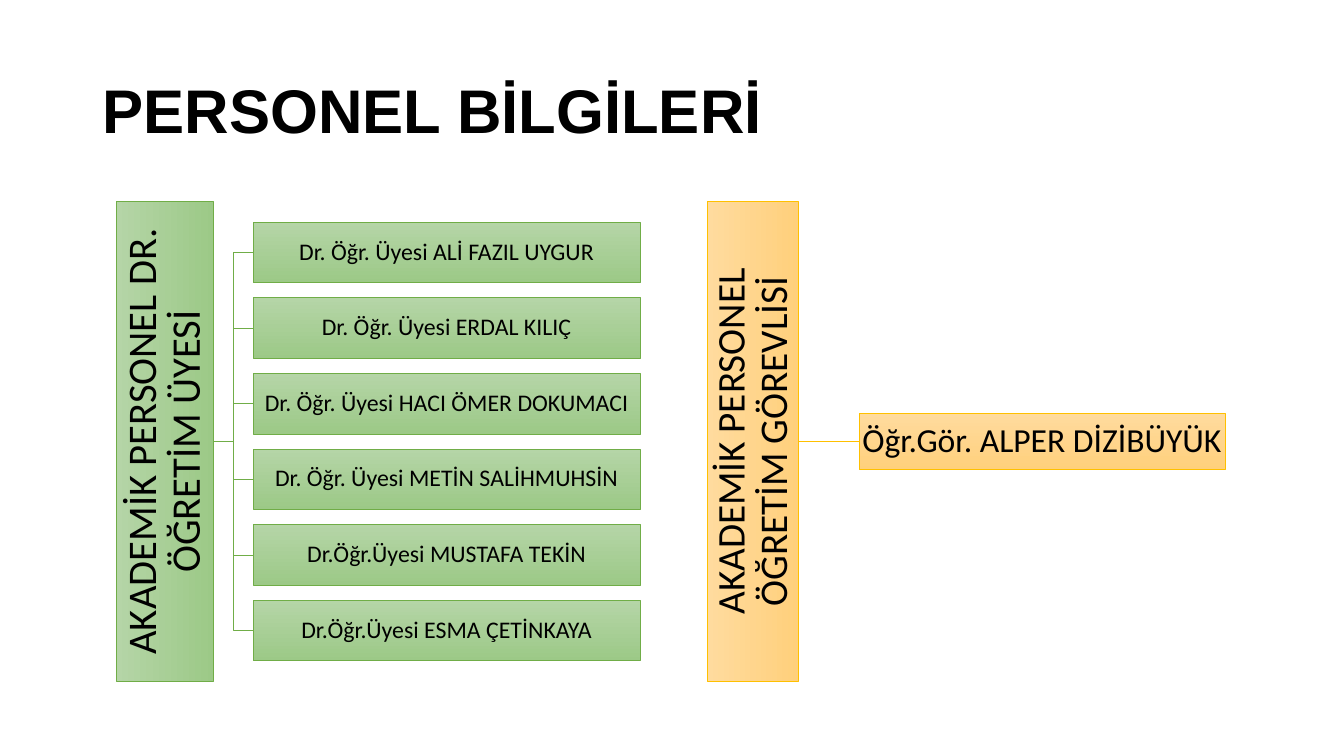
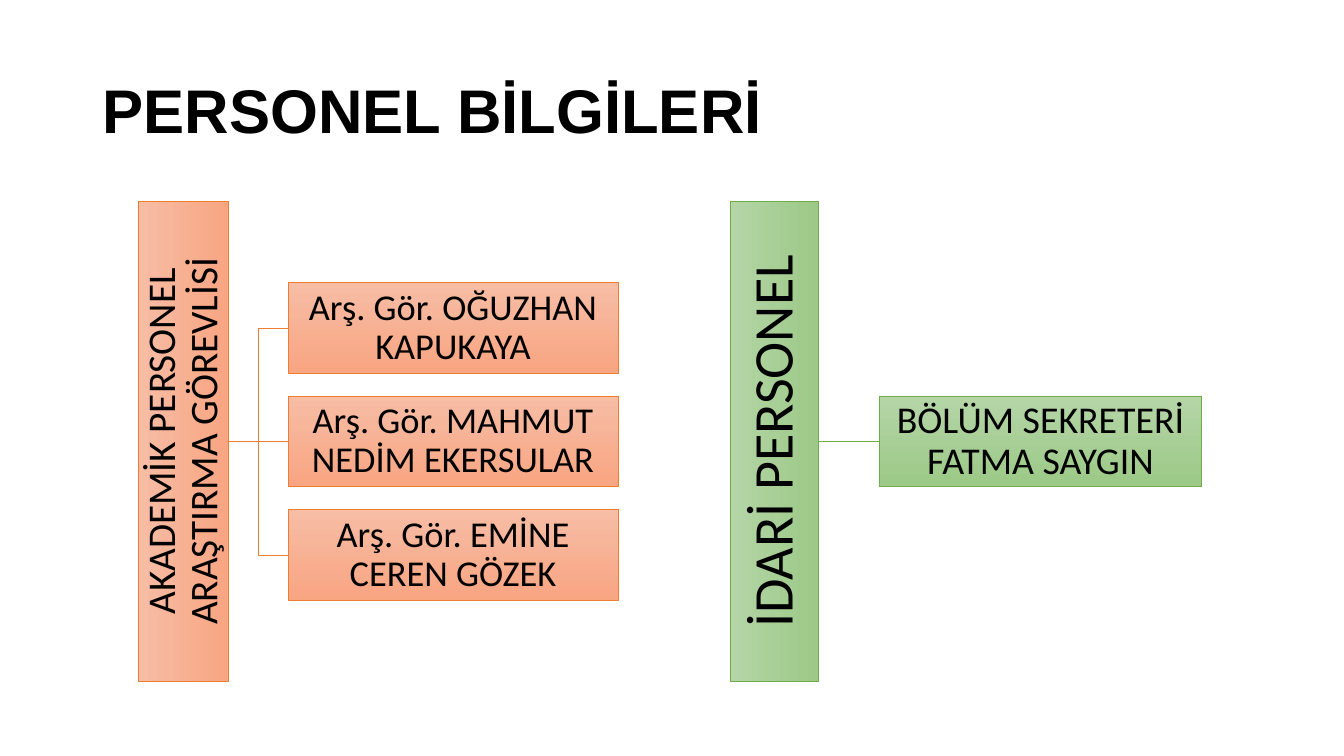
from lxml.etree import SubElement
from pptx import Presentation
from pptx.dml.color import RGBColor
from pptx.enum.shapes import MSO_CONNECTOR, MSO_SHAPE
from pptx.enum.text import MSO_ANCHOR, PP_ALIGN
from pptx.oxml.ns import qn
from pptx.util import Inches, Pt

TITLE = "PERSONEL BİLGİLERİ"
COLORS = {
    "text": "000000",
    "green": {"light": "B5D5A7", "dark": "9CC987", "line": "70AD47"},
    "gold": {"light": "FFDB9E", "dark": "FFD07C", "line": "FFC000"},
    "orange": {"light": "F7BDA5", "dark": "F8A582", "line": "ED7D31"},
}
MIDDLE = 4.38
HEADER_HEIGHT = 4.76
PITCH_RATIO = 1.25
TOP, LEFT, BOTTOM, RIGHT = range(4)

PAGES = [
    [
        {
            "color": "green", "left": 1.15, "gap": 0.39,
            "header": "AKADEMİK PERSONEL DR. ÖĞRETİM ÜYESİ",
            "header_width": 0.97, "header_size": 29,
            "members": [
                "Dr. Öğr. Üyesi ALİ FAZIL UYGUR",
                "Dr. Öğr. Üyesi ERDAL KILIÇ",
                "Dr. Öğr. Üyesi HACI ÖMER DOKUMACI",
                "Dr. Öğr. Üyesi METİN SALİHMUHSİN",
                "Dr.Öğr.Üyesi MUSTAFA TEKİN",
                "Dr.Öğr.Üyesi ESMA ÇETİNKAYA",
            ],
            "member_width": 3.84, "member_height": 0.6, "member_size": 17,
        },
        {
            "color": "gold", "left": 7.02, "gap": 0.6,
            "header": "AKADEMİK PERSONEL ÖĞRETİM GÖREVLİSİ",
            "header_width": 0.9, "header_size": 28,
            "members": ["Öğr.Gör. ALPER DİZİBÜYÜK"],
            "member_width": 3.63, "member_height": 0.56, "member_size": 24,
        },
    ],
    [
        {
            "color": "orange", "left": 1.37, "gap": 0.59,
            "header": "AKADEMİK PERSONEL ARAŞTIRMA GÖREVLİSİ",
            "header_width": 0.9, "header_size": 28,
            "members": [
                "Arş. Gör. OĞUZHAN KAPUKAYA",
                "Arş. Gör. MAHMUT NEDİM EKERSULAR",
                "Arş. Gör. EMİNE CEREN GÖZEK",
            ],
            "member_width": 3.27, "member_height": 0.9, "member_size": 26,
        },
        {
            "color": "green", "left": 7.24, "gap": 0.6,
            "header": "İDARİ PERSONEL",
            "header_width": 0.88, "header_size": 40,
            "members": ["BÖLÜM SEKRETERİ FATMA SAYGIN"],
            "member_width": 3.2, "member_height": 0.9, "member_size": 27,
        },
    ],
]


def rgb(value):
    return RGBColor.from_string(value)


def write(box, text, size, font="Calibri", bold=False, align=PP_ALIGN.CENTER,
          margin=0.02, vertical=False):
    frame = box.text_frame
    frame.word_wrap = True
    frame.vertical_anchor = MSO_ANCHOR.MIDDLE
    frame.margin_left = frame.margin_right = Inches(margin)
    frame.margin_top = frame.margin_bottom = Inches(margin)
    if vertical:
        frame._txBody.bodyPr.set("vert", "vert270")
    para = frame.paragraphs[0]
    para.alignment = align
    para.line_spacing = 0.9
    span = para.add_run()
    span.text = text
    span.font.name = font
    span.font.size = Pt(size)
    span.font.bold = bold
    span.font.color.rgb = rgb(COLORS["text"])


def add_panel(page, left, width, height, palette, angle, middle=MIDDLE):
    panel = page.shapes.add_shape(
        MSO_SHAPE.RECTANGLE, Inches(left), Inches(middle - height / 2),
        Inches(width), Inches(height))
    panel.shadow.inherit = False
    panel.fill.gradient()
    panel.fill.gradient_angle = angle
    for stop, position, shade in zip(panel.fill.gradient_stops, (0, 1), ("light", "dark")):
        stop.position = position
        stop.color.rgb = rgb(palette[shade])
    panel.line.color.rgb = rgb(palette["line"])
    panel.line.width = Pt(0.5)
    return panel


def join(page, header, member, straight, palette):
    kind = MSO_CONNECTOR.STRAIGHT if straight else MSO_CONNECTOR.ELBOW
    connector = page.shapes.add_connector(
        kind, header.left + header.width, header.top + header.height // 2,
        member.left, member.top + member.height // 2)
    connector.begin_connect(header, RIGHT)
    connector.end_connect(member, LEFT)
    connector.line.color.rgb = rgb(palette["line"])
    connector.line.width = Pt(0.5)
    SubElement(connector._element.spPr, qn("a:effectLst"))


def add_group(page, group):
    palette = COLORS[group["color"]]
    header = add_panel(page, group["left"], group["header_width"], HEADER_HEIGHT, palette, 0)
    write(header, group["header"], group["header_size"], vertical=True)
    member_left = group["left"] + group["header_width"] + group["gap"]
    height = group["member_height"]
    center = (len(group["members"]) - 1) / 2
    for index, name in enumerate(group["members"]):
        middle = MIDDLE + (index - center) * height * PITCH_RATIO
        member = add_panel(page, member_left, group["member_width"], height,
                           palette, 270, middle)
        write(member, name, group["member_size"])
        join(page, header, member, index == center, palette)


def add_title(page):
    box = page.shapes.add_textbox(Inches(0.92), Inches(0.4), Inches(11.5), Inches(1.45))
    write(box, TITLE, 44, font="Arial", bold=True, align=PP_ALIGN.LEFT, margin=0.1)


def main():
    deck = Presentation()
    deck.slide_width, deck.slide_height = Inches(13.33), Inches(7.5)
    for groups in PAGES:
        page = deck.slides.add_slide(deck.slide_layouts[6])
        add_title(page)
        for group in groups:
            add_group(page, group)
    deck.save("out.pptx")


if __name__ == "__main__":
    main()
